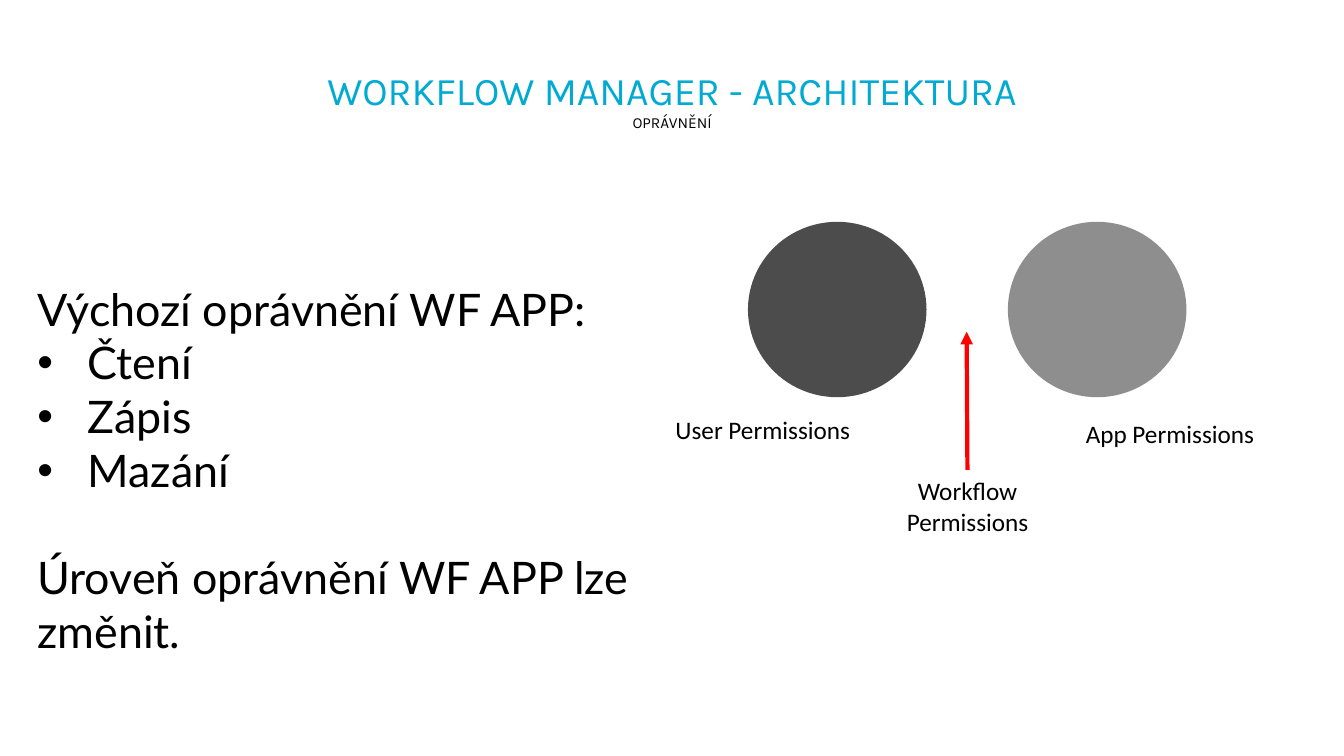
import pptx
import pptx.util
import pptx.dml.color
import pptx.enum.shapes
import pptx.enum.text
import pptx.oxml
import pptx.oxml.ns
from pptx.util import Cm, Pt

BLUE = pptx.dml.color.RGBColor(0x00, 0xAA, 0xD3)
BLACK = pptx.dml.color.RGBColor(0x00, 0x00, 0x00)
GRAY = pptx.dml.color.RGBColor(0x5F, 0x5F, 0x5F)
RED = pptx.dml.color.RGBColor(0xFF, 0x00, 0x00)
CENTER = pptx.enum.text.PP_ALIGN.CENTER
NAMESPACE = pptx.oxml.ns.nsdecls("a")


def format_paragraph(paragraph, font_name, size, color, alignment=None):
    paragraph.alignment = alignment
    for run in paragraph.runs:
        run.font.name = font_name
        run.font.size = Pt(size)
        run.font.color.rgb = color


def add_text(left, top, width, height, text, font_name, size, alignment=None):
    box = slide.shapes.add_textbox(Cm(left), Cm(top), Cm(width), Cm(height))
    box.text_frame.word_wrap = True
    box.text_frame.text = text
    for paragraph in box.text_frame.paragraphs:
        format_paragraph(paragraph, font_name, size, BLACK, alignment)
    return box.text_frame


presentation = pptx.Presentation()
presentation.slide_width = Cm(33.87)
presentation.slide_height = Cm(19.05)
slide = presentation.slides.add_slide(presentation.slide_layouts[5])

# Title and subtitle
title = slide.shapes.title
title.left, title.top, title.width, title.height = Cm(0), Cm(1.02), Cm(33.87), Cm(1.96)
title.text_frame.text = "WORKFLOW MANAGER - ARCHITEKTURA"
title.text_frame.auto_size = pptx.enum.text.MSO_AUTO_SIZE.NONE
title.text_frame.vertical_anchor = pptx.enum.text.MSO_ANCHOR.MIDDLE
title.text_frame.paragraphs[0].line_spacing = Pt(48)
format_paragraph(title.text_frame.paragraphs[0], "Karla", 28, BLUE, CENTER)

subtitle = add_text(4.24, 2.77, 25.4, 0.69, "OPRÁVNĚNÍ", "Karla", 11, CENTER)
subtitle.paragraphs[0].line_spacing = 0.9

# Default permissions
permissions = ["Čtení", "Zápis", "Mazání"]
lines = ["Výchozí oprávnění WF APP:", *permissions, "Úroveň oprávnění WF APP lze změnit."]
body = add_text(0.94, 7.09, 18.31, 8.2, "\n".join(lines), "Lato", 32)
body.margin_left = body.margin_top = body.margin_right = body.margin_bottom = 0
for paragraph in body.paragraphs[1:-1]:
    properties = paragraph._p.get_or_add_pPr()
    properties.set("marL", str(Cm(1.27)))
    properties.set("indent", str(-Cm(1.27)))
    properties.append(pptx.oxml.parse_xml(f'<a:buFont {NAMESPACE} typeface="Arial"/>'))
    properties.append(pptx.oxml.parse_xml(f'<a:buChar {NAMESPACE} char="•"/>'))
body.paragraphs[-1].space_before = Pt(38.4)

# Permission circles, 70 % opaque
for left, color in [(18.85, BLACK), (25.4, GRAY)]:
    circle = slide.shapes.add_shape(
        pptx.enum.shapes.MSO_SHAPE.OVAL, Cm(left), Cm(5.59), Cm(4.5), Cm(4.42))
    circle.shadow.inherit = False
    circle.fill.solid()
    circle.fill.fore_color.rgb = color
    circle.line.fill.background()
    fill_color = circle._element.spPr.find(".//" + pptx.oxml.ns.qn("a:srgbClr"))
    fill_color.append(pptx.oxml.parse_xml(f'<a:alpha {NAMESPACE} val="70000"/>'))

# Labels
for left, top, height, label in [
    (16.66, 10.31, 1.02, "User Permissions"),
    (26.92, 10.41, 1.02, "App Permissions"),
    (21.82, 11.86, 1.8, "Workflow Permissions"),
]:
    add_text(left, top, 5.13, height, label, "Calibri", 18, CENTER)

# Arrow to the gap between the circles
arrow = slide.shapes.add_connector(
    pptx.enum.shapes.MSO_CONNECTOR.STRAIGHT, Cm(24.38), Cm(11.84), Cm(24.36), Cm(8.36))
arrow.line.color.rgb = RED
arrow.line.width = Pt(3)
arrow.line._get_or_add_ln().append(
    pptx.oxml.parse_xml(f'<a:tailEnd {NAMESPACE} type="triangle"/>'))
arrow._element.spPr.append(pptx.oxml.parse_xml(f"<a:effectLst {NAMESPACE}/>"))

presentation.save("out.pptx")
